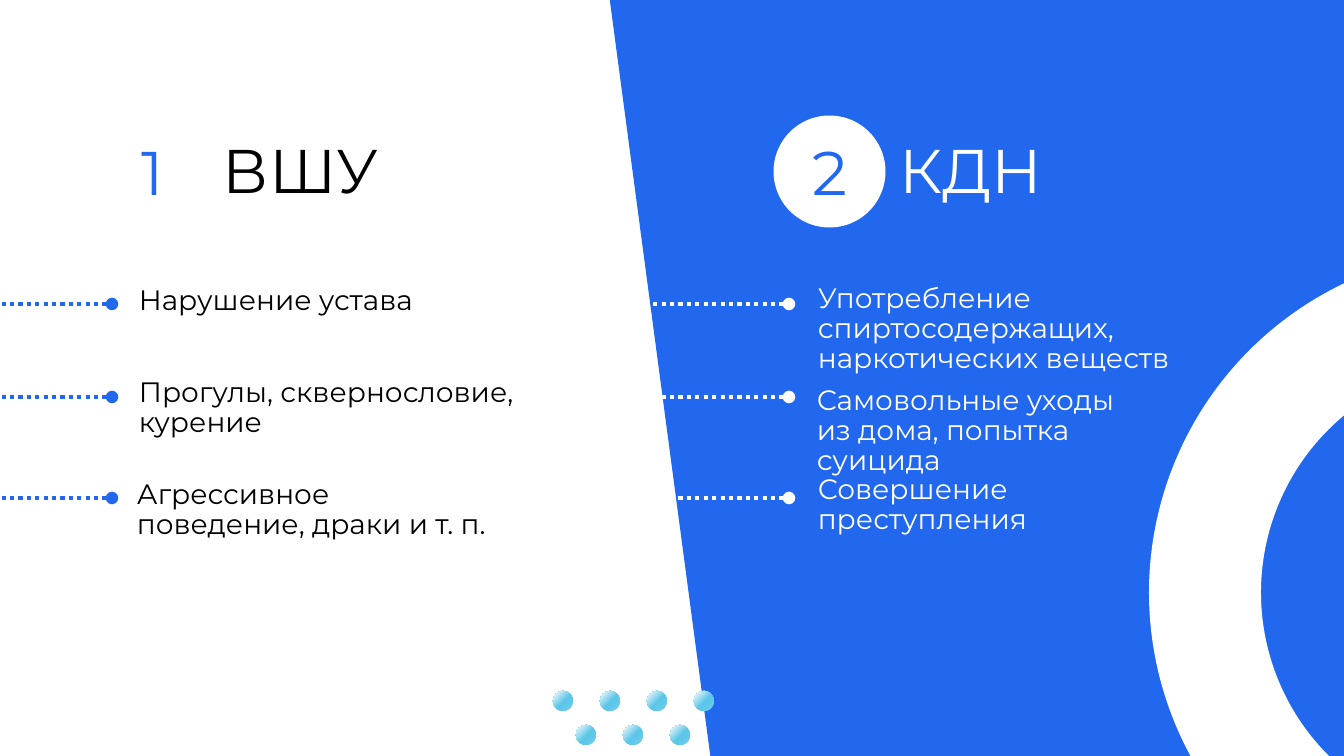
from lxml.etree import SubElement
from pptx import Presentation
from pptx.dml.color import RGBColor
from pptx.enum.dml import MSO_LINE_DASH_STYLE as Dash
from pptx.enum.shapes import MSO_CONNECTOR as Conn, MSO_SHAPE as Shape
from pptx.enum.text import MSO_AUTO_SIZE as AutoSize, PP_ALIGN as Align
from pptx.oxml import parse_xml
from pptx.oxml.ns import nsdecls, qn
from pptx.util import Pt

BLUE = RGBColor(0x21, 0x68, 0xEE)
WHITE = RGBColor(0xFF, 0xFF, 0xFF)
BLACK = RGBColor(0x00, 0x00, 0x00)
SKY = RGBColor(0x5A, 0xC6, 0xE8)
PALE_SKY = RGBColor(0x71, 0xCD, 0xF0)

FONT = "Montserrat"
W, H = 1344, 756
SCALE = 12192000 / W
COLUMN_GAP = 677
LINE_TOPS = (304, 397, 498)


def px(*values):
    return [round(v * SCALE) for v in values]


def add_text(s, box, text, size, color, align=Align.LEFT):
    tf = s.shapes.add_textbox(*px(*box)).text_frame
    for name, value in {"word_wrap": True, "auto_size": AutoSize.SHAPE_TO_FIT_TEXT}.items():
        setattr(tf, name, value)
    p = tf.paragraphs[0]
    for name, value in {"alignment": align, "line_spacing": 0.9}.items():
        setattr(p, name, value)
    r = p.add_run()
    r.text = text
    for name, value in {"name": FONT, "size": Pt(size)}.items():
        setattr(r.font, name, value)
    r.font.color.rgb = color


def add_circle(shapes, x, y, size):
    sp = shapes.add_shape(Shape.OVAL, *px(x, y, size, size))
    sp.shadow.inherit = False
    return sp


def set_outline(sp, width):
    sp.line.color.rgb = WHITE
    sp.line.width = Pt(width)


def add_dotted_line(s, x1, x2, y, color):
    cxn = s.shapes.add_connector(Conn.STRAIGHT, *px(x1, y, x2, y))
    cxn.line.color.rgb = color
    cxn.line.width = Pt(3)
    cxn.line.dash_style = Dash.ROUND_DOT
    SubElement(cxn.line._get_or_add_ln(), qn("a:tailEnd"), type="oval")
    SubElement(cxn._element.spPr, qn("a:effectLst"))


def add_panel(s):
    builder = s.shapes.build_freeform(609, -6, scale=SCALE)
    builder.add_line_segments([(711, 761), (1349, 760), (1349, -5)], close=True)
    sp = builder.convert_to_shape()
    sp.shadow.inherit = False
    sp.fill.solid()
    sp.fill.fore_color.rgb = BLUE
    sp.line.fill.background()


def add_column(s, x, number, title, items, line_color, text_color):
    for y in LINE_TOPS:
        add_dotted_line(s, x - 49, x + 112, y, line_color)
    add_text(s, (x + 213, 135, 486, 78), title, 44, text_color)
    for dx, y, width, height, text in items:
        add_text(s, (x + dx, y, width, height), text, 20, text_color)
    badge = add_circle(s.shapes, x + 107, 126, 91)
    badge.fill.solid()
    badge.fill.fore_color.rgb = WHITE
    set_outline(badge, 15)
    add_text(s, (x + 83, 137, 139, 78), number, 44, BLUE, Align.CENTER)


def add_dots(s, x, y, size=20, step=47, row_gap=34):
    group = s.shapes.add_group_shape()
    stops = "".join(
        f'<a:gs pos="{pos}"><a:srgbClr val="{color}"/></a:gs>'
        for pos, color in ((0, WHITE), (54000, SKY), (100000, PALE_SKY))
    )
    gradient = (
        f'<a:gradFill {nsdecls("a")} rotWithShape="1"><a:gsLst>{stops}</a:gsLst>'
        '<a:path path="circle"><a:fillToRect r="100000" b="100000"/></a:path></a:gradFill>'
    )
    for row, count in enumerate((4, 3)):
        for col in range(count):
            dot = add_circle(group.shapes, x + col * step + row * (step // 2), y + row * row_gap, size)
            dot.line.fill.background()
            dot.fill.gradient()
            spPr = dot._element.spPr
            spPr.replace(spPr.find(qn("a:gradFill")), parse_xml(gradient))


def add_ring(s, x, y, size):
    ring = add_circle(s.shapes, x, y, size)
    ring.fill.background()
    set_outline(ring, 80)


def main():
    prs = Presentation()
    prs.slide_width, prs.slide_height = px(W, H)
    s = prs.slides.add_slide(prs.slide_layouts[6])
    add_panel(s)
    add_column(s, 0, "1", "ВШУ", [
        (129, 281, 404, 40, "Нарушение устава"),
        (129, 373, 424, 72, "Прогулы, сквернословие, курение"),
        (127, 475, 380, 72, "Агрессивное поведение, драки и т. п."),
    ], BLUE, BLACK)
    add_column(s, COLUMN_GAP, "2", "КДН", [
        (131, 279, 468, 102, "Употребление спиртосодержащих, наркотических веществ"),
        (130, 381, 342, 102, "Самовольные уходы из дома, попытка суицида"),
        (131, 470, 342, 72, "Совершение преступления"),
    ], WHITE, WHITE)
    add_dots(s, 553, 691)
    add_ring(s, 1205, 306, 573)
    prs.save("out.pptx")


if __name__ == "__main__":
    main()
